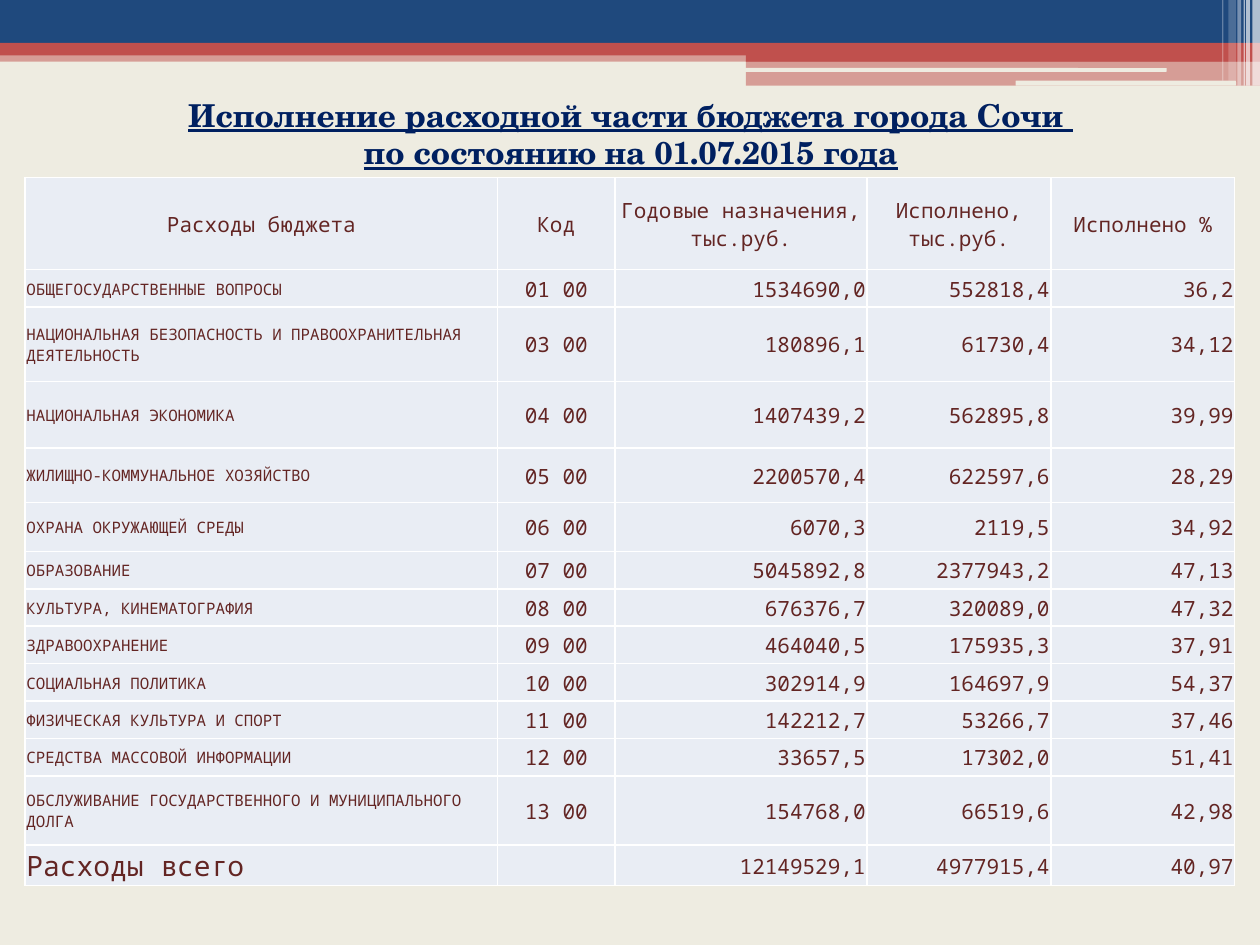
from lxml.etree import SubElement
from pptx import Presentation
from pptx.dml.color import RGBColor
from pptx.enum.shapes import MSO_SHAPE as SHAPE
from pptx.enum.text import MSO_ANCHOR, MSO_AUTO_SIZE, PP_ALIGN as ALIGN
from pptx.oxml.ns import qn
from pptx.util import Inches, Pt

# Content
TITLE = ["Исполнение расходной части бюджета города Сочи ",
         "по состоянию на 01.07.2015 года"]
HEADER = ["Расходы бюджета", "Код", "Годовые назначения, тыс.руб.",
          "Исполнено, тыс.руб.", "Исполнено %"]
EXPENSES = [
    ("ОБЩЕГОСУДАРСТВЕННЫЕ ВОПРОСЫ", "01 00", "1534690,0", "552818,4", "36,2"),
    ("НАЦИОНАЛЬНАЯ БЕЗОПАСНОСТЬ И ПРАВООХРАНИТЕЛЬНАЯ ДЕЯТЕЛЬНОСТЬ",
     "03 00", "180896,1", "61730,4", "34,12"),
    ("НАЦИОНАЛЬНАЯ ЭКОНОМИКА", "04 00", "1407439,2", "562895,8", "39,99"),
    ("ЖИЛИЩНО-КОММУНАЛЬНОЕ ХОЗЯЙСТВО", "05 00", "2200570,4", "622597,6", "28,29"),
    ("ОХРАНА ОКРУЖАЮЩЕЙ СРЕДЫ", "06 00", "6070,3", "2119,5", "34,92"),
    ("ОБРАЗОВАНИЕ", "07 00", "5045892,8", "2377943,2", "47,13"),
    ("КУЛЬТУРА, КИНЕМАТОГРАФИЯ", "08 00", "676376,7", "320089,0", "47,32"),
    ("ЗДРАВООХРАНЕНИЕ", "09 00", "464040,5", "175935,3", "37,91"),
    ("СОЦИАЛЬНАЯ ПОЛИТИКА", "10 00", "302914,9", "164697,9", "54,37"),
    ("ФИЗИЧЕСКАЯ КУЛЬТУРА И СПОРТ", "11 00", "142212,7", "53266,7", "37,46"),
    ("СРЕДСТВА МАССОВОЙ ИНФОРМАЦИИ", "12 00", "33657,5", "17302,0", "51,41"),
    ("ОБСЛУЖИВАНИЕ ГОСУДАРСТВЕННОГО И МУНИЦИПАЛЬНОГО ДОЛГА",
     "13 00", "154768,0", "66519,6", "42,98"),
]
TOTAL = ("Расходы всего", "", "12149529,1", "4977915,4", "40,97")
ROWS = [HEADER, *EXPENSES, TOTAL]

# Look
NAVY, RED, CREAM, WHITE = "1F497D", "C0504D", "EEECE1", "FFFFFF"
TITLE_BLUE, MAROON, CELL_FILL = "002060", "632523", "E9EDF4"
TITLE_FONT, TABLE_FONT = "TeX Gyre Schola", "Noto Sans Mono"

# Header bands: left, top, width, height, colour, opacity %
BANDS = [
    (0, 0.4, 10, 0.09, RED, 50),
    (0, 0, 10, 0.34, NAVY, 100),
    (0, 0.34, 10, 0.1, RED, 100),
    (5.92, 0.39, 4.08, 0.1, RED, 100),
    (5.92, 0.48, 4.08, 0.2, RED, 50),
]
SLITS = [(5.91, 0.54, 3.35, 0.03), (8.06, 0.64, 1.75, 0.04)]
# Vertical stripes: left, width, height, opacity %
STRIPES = [(9.94, 0.06, 0.68, 65), (9.89, 0.03, 0.68, 65), (9.87, 0.01, 0.68, 60),
           (9.82, 0.03, 0.68, 40), (9.75, 0.06, 0.64, 20), (9.7, 0.01, 0.64, 30)]

# Table grid: rows without a height of their own share what is left
LEFT, TABLE_TOP, WIDTH, TABLE_HEIGHT = 0.2, 1.41, 9.61, 5.62
COLUMNS = [3.75, 0.93, 2, 1.46, 1.46]
TALL_ROWS = {0: 0.73, 2: 0.59, 3: 0.53, 4: 0.43, 5: 0.39, 12: 0.55, 13: 0.32}
SHARED_HEIGHT = (TABLE_HEIGHT - sum(TALL_ROWS.values())) / (len(ROWS) - len(TALL_ROWS))


def rgb(color):
    return RGBColor.from_string(color)


def add_bar(slide, left, top, width, height, color, opacity=100, kind=SHAPE.RECTANGLE):
    bar = slide.shapes.add_shape(kind, Inches(left), Inches(top),
                                 Inches(width), Inches(height))
    bar.shadow.inherit = False
    bar.fill.solid()
    bar.fill.fore_color.rgb = rgb(color)
    bar.line.fill.background()
    if opacity < 100:
        tint = bar._element.spPr.find(qn("a:solidFill"))[0]
        SubElement(tint, qn("a:alpha"), val=str(opacity * 1000))


def add_run(paragraph, text, size, font, color):
    run = paragraph.add_run()
    run.text = text
    run.font.size = Pt(size)
    run.font.name = font
    run.font.color.rgb = rgb(color)
    return run


def style_cell(cell):
    cell.margin_left = cell.margin_right = cell.margin_top = Inches(0.01)
    cell.margin_bottom = 0
    cell.vertical_anchor = MSO_ANCHOR.MIDDLE
    properties = cell._tc.get_or_add_tcPr()
    for side in ("lnL", "lnR", "lnT", "lnB"):
        border = SubElement(properties, qn(f"a:{side}"), w=str(Pt(1)))
        SubElement(SubElement(border, qn("a:solidFill")), qn("a:srgbClr"), val=WHITE)
    cell.fill.solid()
    cell.fill.fore_color.rgb = rgb(CELL_FILL)


def add_expense_table(slide):
    table = slide.shapes.add_table(len(ROWS), len(COLUMNS), Inches(LEFT), Inches(TABLE_TOP),
                                   Inches(WIDTH), Inches(TABLE_HEIGHT)).table
    table.first_row = table.horz_banding = False
    for column, width in zip(table.columns, COLUMNS):
        column.width = Inches(width)
    last = len(ROWS) - 1
    for r, values in enumerate(ROWS):
        table.rows[r].height = Inches(TALL_ROWS.get(r, SHARED_HEIGHT))
        for c, value in enumerate(values):
            cell = table.cell(r, c)
            style_cell(cell)
            if not value:
                continue
            paragraph = cell.text_frame.paragraphs[0]
            if r == 0 or c == 1:
                paragraph.alignment = ALIGN.CENTER
            else:
                paragraph.alignment = ALIGN.LEFT if c == 0 else ALIGN.RIGHT
            size = 12
            if c == 0 and r > 0:
                size = 16 if r == last else 9
            add_run(paragraph, value, size, TABLE_FONT, MAROON)


def add_title(slide):
    frame = slide.shapes.add_textbox(Inches(LEFT), Inches(0.71),
                                     Inches(WIDTH), Inches(0.71)).text_frame
    frame.word_wrap = True
    frame.auto_size = MSO_AUTO_SIZE.SHAPE_TO_FIT_TEXT
    for i, line in enumerate(TITLE):
        paragraph = frame.add_paragraph() if i else frame.paragraphs[0]
        paragraph.alignment = ALIGN.CENTER
        run = add_run(paragraph, line, 18, TITLE_FONT, TITLE_BLUE)
        run.font.bold = run.font.underline = True


def main():
    deck = Presentation()
    deck.slide_width, deck.slide_height = Inches(10), Inches(7.5)
    slide = deck.slides.add_slide(deck.slide_layouts[6])
    slide.background.fill.solid()
    slide.background.fill.fore_color.rgb = rgb(CREAM)

    # Decoration across the top
    for band in BANDS:
        add_bar(slide, *band)
    for slit in SLITS:
        add_bar(slide, *slit, CREAM, kind=SHAPE.ROUNDED_RECTANGLE)
    for left, width, height, opacity in STRIPES:
        add_bar(slide, left, 0, width, height, WHITE, opacity)

    add_expense_table(slide)
    add_title(slide)
    deck.save("out.pptx")


if __name__ == "__main__":
    main()
